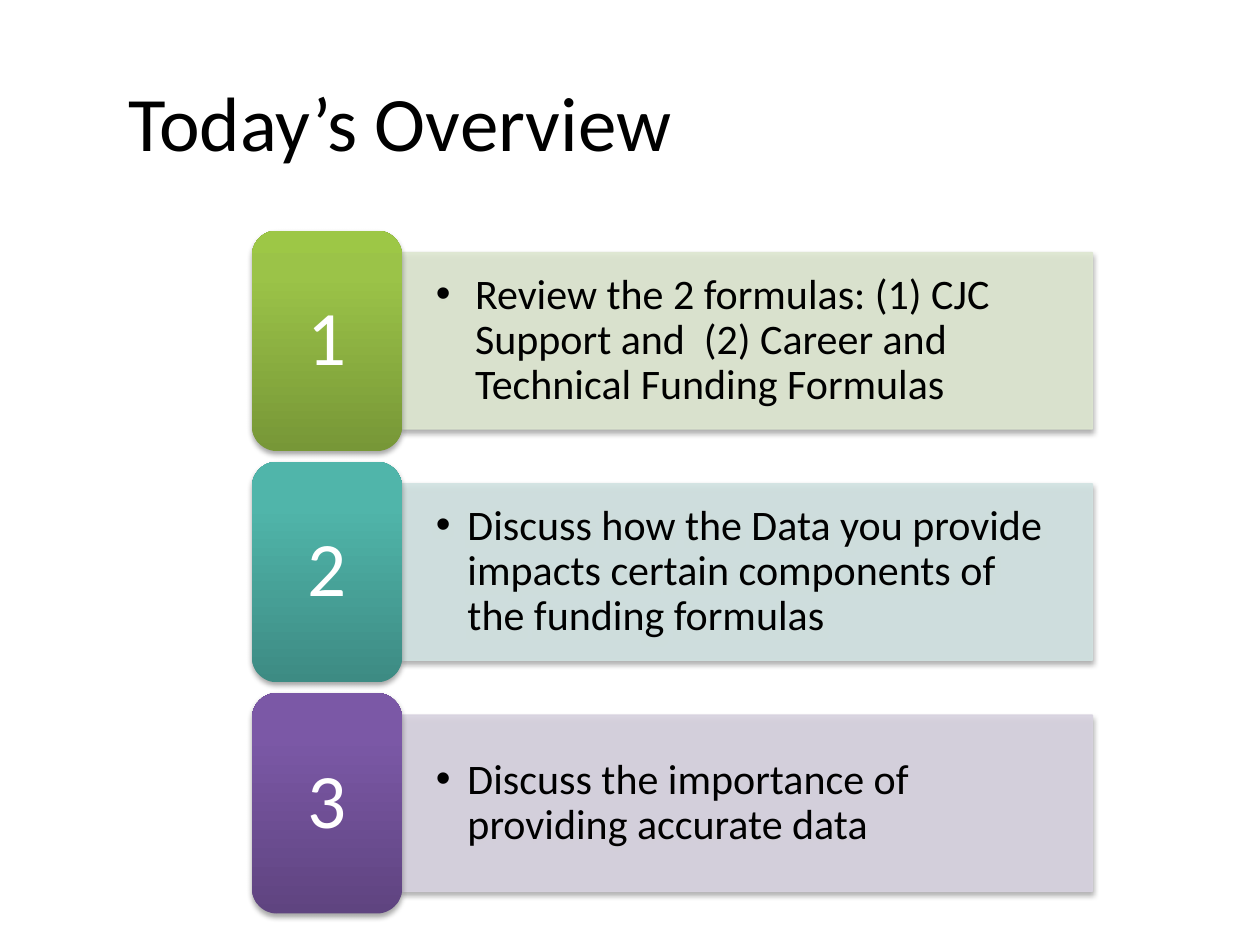
"""Builds the overview slide with three numbered agenda rows."""
from lxml import etree
from pptx import Presentation
from pptx.dml.color import RGBColor
from pptx.enum.shapes import MSO_SHAPE
from pptx.enum.text import MSO_ANCHOR, PP_ALIGN
from pptx.oxml.ns import qn
from pptx.util import Inches, Pt

RECT, ROUNDED = MSO_SHAPE.RECTANGLE, MSO_SHAPE.ROUNDED_RECTANGLE
LEFT, CENTER = PP_ALIGN.LEFT, PP_ALIGN.CENTER
MIDDLE = MSO_ANCHOR.MIDDLE

AGENDA = [
    ("Review the 2 formulas: (1) CJC Support and  (2) Career and Technical Funding Formulas",
     0.31, "DEE7D1", ("779737", "9BC348", "9DC746")),
    ("Discuss how the Data you provide impacts certain components of the funding formulas",
     0.25, "D2E3E2", ("3D8B83", "50B5AA", "4EB8AC")),
    ("Discuss the importance of providing accurate data",
     0.25, "D8D3E0", ("5F4480", "7B58A6", "7C57A8")),
]
TILE_LEFT, TILE_TOP, TILE_WIDTH, TILE_HEIGHT = 2, 1.83, 1.19, 1.75
PANEL_WIDTH, PANEL_HEIGHT = 5.48, 1.4
ROW_PITCH = 1.835


def rgb(value):
    return RGBColor.from_string(value)


def add_element(parent, tag, **attributes):
    return etree.SubElement(parent, qn(tag), {k: str(v) for k, v in attributes.items()})


def add_color(parent, value, alpha=100):
    color = add_element(parent, "a:srgbClr", val=value)
    if alpha < 100:
        add_element(color, "a:alpha", val=alpha * 1000)


class OverviewSlide:
    font = "Calibri"
    panel_alpha = 90
    stops = (0, 80, 100)

    def __init__(self, presentation):
        self.slide = presentation.slides.add_slide(presentation.slide_layouts[5])

    def set_text(self, shape, text, size, color, align, margins=None):
        frame = shape.text_frame
        frame.text = text
        settings = {"word_wrap": True, "vertical_anchor": MIDDLE, **(margins or {})}
        for name, value in settings.items():
            setattr(frame, name, value)
        paragraph = frame.paragraphs[0]
        paragraph.alignment = align
        run_font = paragraph.runs[0].font
        for name, value in {"name": self.font, "size": Pt(size)}.items():
            setattr(run_font, name, value)
        run_font.color.rgb = rgb(color)
        return paragraph

    def title(self, text, left, top, width, height):
        heading = self.slide.shapes.title
        box = {"left": left, "top": top, "width": width, "height": height}
        for name, value in box.items():
            setattr(heading, name, Inches(value))
        self.set_text(heading, text, 44, "000000", LEFT)

    def block(self, kind, left, top, width, height):
        shape = self.slide.shapes.add_shape(
            kind, Inches(left), Inches(top), Inches(width), Inches(height))
        shape.shadow.inherit = False
        effects = shape.element.spPr.find(qn("a:effectLst"))
        shadow = add_element(effects, "a:outerShdw", blurRad=Pt(3.1), dist=Pt(1.8),
                             dir=5400000, rotWithShape=0)
        add_color(shadow, "000000", 35)
        return shape

    def panel(self, text, indent, color, left, top):
        panel = self.block(RECT, left, top, PANEL_WIDTH, PANEL_HEIGHT)
        panel.fill.solid()
        panel.fill.fore_color.rgb = rgb(color)
        panel.line.color.rgb = rgb(color)
        panel.line.width = Pt(0.75)
        for tone in panel.element.spPr.findall(".//" + qn("a:solidFill")):
            tone.clear()
            add_color(tone, color, self.panel_alpha)
        margins = {"margin_left": Inches(0.27), "margin_right": Inches(0.27),
                   "margin_top": Inches(0.14), "margin_bottom": Inches(0.14)}
        paragraph = self.set_text(panel, text, 24, "000000", LEFT, margins)
        paragraph.line_spacing = 0.9
        properties = paragraph._p.get_or_add_pPr()
        properties.set("marL", str(Inches(indent)))
        properties.set("indent", str(-Inches(indent)))
        add_element(properties, "a:buFont", typeface="Arial")
        add_element(properties, "a:buChar", char="•")

    def tile(self, number, colors, left, top):
        tile = self.block(ROUNDED, left, top, TILE_WIDTH, TILE_HEIGHT)
        tile.fill.gradient()
        tile.fill.gradient_angle = 90
        tile.line.fill.background()
        gradient = tile.element.spPr.find(".//" + qn("a:gsLst"))
        gradient.clear()
        for position, color in zip(self.stops, colors):
            add_color(add_element(gradient, "a:gs", pos=position * 1000), color)
        self.set_text(tile, str(number), 44, "FFFFFF", CENTER).line_spacing = 0.9


def main():
    presentation = Presentation()
    presentation.slide_width, presentation.slide_height = Inches(10), Inches(7.5)
    overview = OverviewSlide(presentation)
    overview.title("Today’s Overview", 0.92, 0.33, 8.83, 1.25)
    for row, (topic, indent, panel_color, tile_colors) in enumerate(AGENDA):
        top = TILE_TOP + row * ROW_PITCH
        panel_top = top + (TILE_HEIGHT - PANEL_HEIGHT) / 2
        overview.panel(topic, indent, panel_color, TILE_LEFT + TILE_WIDTH, panel_top)
        overview.tile(row + 1, tile_colors, TILE_LEFT, top)
    presentation.save("out.pptx")


if __name__ == "__main__":
    main()
